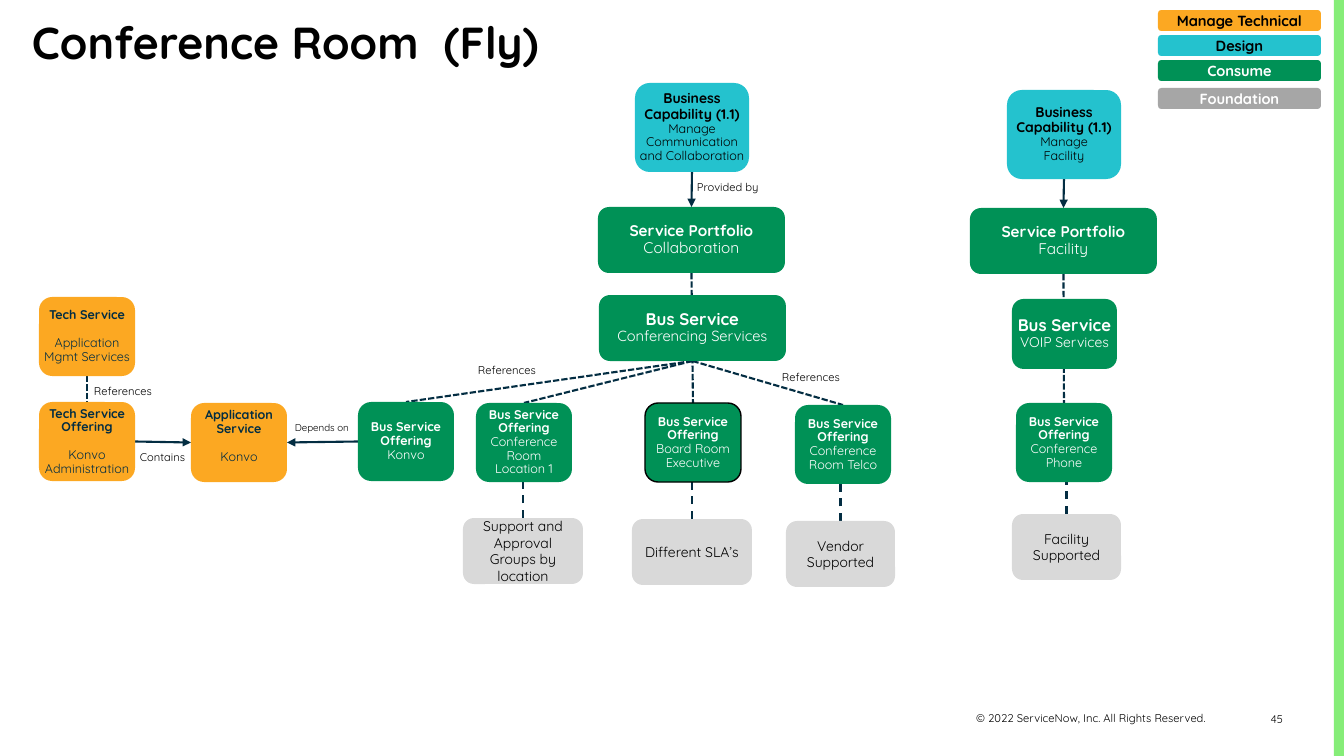
from lxml import etree
from pptx import Presentation
from pptx.dml.color import RGBColor
from pptx.enum.dml import MSO_LINE
from pptx.enum.shapes import MSO_CONNECTOR, MSO_SHAPE
from pptx.enum.text import MSO_ANCHOR, PP_ALIGN
from pptx.oxml.ns import qn
from pptx.util import Pt

PX = 914400 / 100.8
FONT = "Quicksand"
WHITE = RGBColor(0xFF, 0xFF, 0xFF)
BLACK = RGBColor(0x00, 0x00, 0x00)
NAVY = RGBColor(0x03, 0x2D, 0x42)
ORANGE = RGBColor(0xFC, 0xA8, 0x22)
CYAN = RGBColor(0x24, 0xC2, 0xCE)
GREEN = RGBColor(0x00, 0x91, 0x56)
GREY = RGBColor(0xA6, 0xA6, 0xA6)
PALE = RGBColor(0xD9, 0xD9, 0xD9)
LIME = RGBColor(0x86, 0xED, 0x78)
RECT, ROUND = MSO_SHAPE.RECTANGLE, MSO_SHAPE.ROUNDED_RECTANGLE
STRAIGHT = MSO_CONNECTOR.STRAIGHT
SHORT_DASH, DASH = MSO_LINE.SQUARE_DOT, MSO_LINE.DASH
LEFT, CENTER, RIGHT = PP_ALIGN.LEFT, PP_ALIGN.CENTER, PP_ALIGN.RIGHT
TOP_ANCHOR, MIDDLE = MSO_ANCHOR.TOP, MSO_ANCHOR.MIDDLE
TOP_SIDE, LEFT_SIDE, BOTTOM_SIDE, RIGHT_SIDE = range(4)
OFFERING_W, OFFERING_H = 96, 79


def px(*lengths):
    return [round(n * PX) for n in lengths]


def write(shape, lines, color, align=CENTER, anchor=MIDDLE, spacing=None, wrap=True):
    """Fill a shape with (text, size, bold[, space before]) paragraphs."""
    tf = shape.text_frame
    tf.word_wrap, tf.vertical_anchor = wrap, anchor
    for i, (text, size, bold, *before) in enumerate(lines):
        p = tf.paragraphs[0] if i == 0 else tf.add_paragraph()
        p.alignment, p.line_spacing = align, spacing
        if before:
            p.space_before = Pt(before[0])
        r = p.add_run()
        r.text = text
        for name, value in dict(name=FONT, size=Pt(size), bold=bold).items():
            setattr(r.font, name, value)
        r.font.color.rgb = color


def add_text(s, box, text, size, bold=False, **layout):
    write(s.shapes.add_textbox(*px(*box)), [(text, size, bold)], BLACK, **layout)


def add_block(s, box, fill, kind=ROUND):
    sp = s.shapes.add_shape(kind, *px(*box))
    sp.shadow.inherit = False
    sp.fill.solid()
    sp.fill.fore_color.rgb = fill
    sp.line.fill.background()
    return sp


def add_node(s, box, fill, color, lines, bottom=0):
    sp = add_block(s, box, fill)
    insets = dict(margin_left=0, margin_top=0, margin_right=0, margin_bottom=px(bottom)[0])
    for name, value in insets.items():
        setattr(sp.text_frame, name, value)
    write(sp, lines, color, spacing=0.9)
    return sp


def link(s, start, start_side, end=None, end_side=TOP_SIDE, dash=None, rise=0):
    """Join two nodes behind the boxes; without an end node, go straight up by rise."""
    c = s.shapes.add_connector(STRAIGHT, 0, 0, 0, 0)
    c.begin_connect(start, start_side)
    if end is None:
        c.end_x, c.end_y = c.begin_x, c.begin_y - px(rise)[0]
    else:
        c.end_connect(end, end_side)
    c.line.color.rgb, c.line.width = NAVY, Pt(1.5)
    if dash:
        c.line.dash_style = dash
    else:
        etree.SubElement(c.line._get_or_add_ln(), qn("a:tailEnd"), type="triangle")
    etree.SubElement(c._element.spPr, qn("a:effectLst"))
    s.shapes._spTree.insert(2, c._element)


def add_label(s, x, y, text, size=8):
    add_text(s, (x, y, 157, 16), text, size, align=LEFT, anchor=TOP_ANCHOR)


def add_frame(s, w, h):
    add_block(s, (w - 10, 0, 10, h), LIME, RECT)
    add_text(s, (22, 10, 540, 65), "Conference Room  (Fly)", 32, True,
             align=LEFT, anchor=TOP_ANCHOR, wrap=False)
    add_text(s, (875, h - 49, 341, 23), "© 2022 ServiceNow, Inc. All Rights Reserved.", 8,
             align=RIGHT)
    add_text(s, (1219, h - 49, 74, 25), "45", 8, align=RIGHT, anchor=TOP_ANCHOR)


def add_legend(s, x, y):
    entries = [(0, "Manage Technical", ORANGE, BLACK), (25, "Design", CYAN, BLACK),
               (50, "Consume", GREEN, WHITE), (78, "Foundation", GREY, WHITE)]
    for dy, name, fill, color in entries:
        write(add_block(s, (x, y + dy, 163, 21), fill), [(name, 10.5, True)], color)


def add_offering(s, x, y, name):
    return add_node(s, (x, y, OFFERING_W, OFFERING_H), GREEN, WHITE,
                    [("Bus Service Offering", 9, True), (name, 9, False)])


def add_support(s, box, text):
    sp = add_block(s, box, PALE)
    write(sp, [(text, 10, False)], BLACK)
    link(s, sp, TOP_SIDE, dash=DASH, rise=37)


def add_chain(s, cx, tops, domain, capability, service, service_size, name_size):
    """Stack capability, portfolio and service around a centre line."""
    cap_y, portfolio_y, service_y = tops
    w, h = service_size
    cap = add_node(s, (cx - 57, cap_y, 114, 89), CYAN, BLACK,
                   [("Business Capability (1.1)", 10, True)]
                   + [(line, 9, False) for line in capability])
    portfolio = add_node(s, (cx - 94, portfolio_y, 187, 66), GREEN, WHITE,
                         [("Service Portfolio", 11, True), (domain, 11, False)])
    bus = add_node(s, (cx - w // 2, service_y, w, h), GREEN, WHITE,
                   [("Bus Service", 12, True), (service, name_size, False)])
    link(s, cap, BOTTOM_SIDE, portfolio)
    return portfolio, bus


def add_collaboration(s, cx, y):
    portfolio, bus = add_chain(s, cx, (y, y + 124, y + 212), "Collaboration",
                               ["Manage", "Communication and Collaboration"],
                               "Conferencing Services", (187, 66), 10.5)
    konvo = add_offering(s, cx - 334, y + 319, "Konvo")
    location = add_offering(s, cx - 216, y + 320, "Conference Room Location 1")
    board = add_offering(s, cx - 47, y + 320, "Board Room Executive")
    telco = add_offering(s, cx + 103, y + 322, "Conference Room Telco")
    board.line.color.rgb, board.line.width = BLACK, Pt(1)
    for offering in (konvo, location, telco):
        link(s, bus, BOTTOM_SIDE, offering, dash=SHORT_DASH)
    link(s, portfolio, BOTTOM_SIDE, board, dash=SHORT_DASH)
    add_support(s, (cx - 229, y + 435, 120, 66), "Support and Approval Groups by location")
    add_support(s, (cx - 60, y + 436, 120, 66), "Different SLA’s")
    add_support(s, (cx + 94, y + 438, 109, 66), "Vendor Supported")
    add_label(s, cx - 5, y + 92, "Provided by")
    add_label(s, cx - 224, y + 275, "References")
    add_label(s, cx + 80, y + 282, "References")
    return konvo


def add_facility(s, cx, y):
    portfolio, _ = add_chain(s, cx, (y, y + 118, y + 209), "Facility",
                             ["Manage", "Facility"], "VOIP Services", (105, 70), 10)
    phone = add_offering(s, cx - 48, y + 313, "Conference Phone")
    link(s, portfolio, BOTTOM_SIDE, phone, dash=SHORT_DASH)
    add_support(s, (cx - 52, y + 424, 109, 66), "Facility Supported")


def add_technical(s, x, y, konvo):
    entries = [(0, 0, "Tech Service", "Application Mgmt Services", 0),
               (0, 105, "Tech Service Offering", "Konvo Administration", 0),
               (152, 106, "Application Service", "Konvo", 12)]
    tech, offering, app = [
        add_node(s, (x + dx, y + dy, OFFERING_W, OFFERING_H), ORANGE, NAVY,
                 [(head, 9, True), (name, 9, False, 10)], bottom)
        for dx, dy, head, name, bottom in entries]
    link(s, tech, BOTTOM_SIDE, offering, dash=SHORT_DASH)
    link(s, offering, RIGHT_SIDE, app, LEFT_SIDE)
    link(s, konvo, LEFT_SIDE, app, RIGHT_SIDE)
    add_label(s, x + 45, y + 82, "References")
    add_label(s, x + 91, y + 148, "Contains")
    add_label(s, x + 246, y + 120, "Depends on", 7)


def main():
    prs = Presentation()
    w, h = 1344, 756
    prs.slide_width, prs.slide_height = px(w, h)
    s = prs.slides.add_slide(prs.slide_layouts[6])
    add_frame(s, w, h)
    add_legend(s, 1158, 10)
    konvo = add_collaboration(s, 692, 83)
    add_facility(s, 1064, 90)
    add_technical(s, 39, 297, konvo)
    prs.save("out.pptx")


if __name__ == "__main__":
    main()
